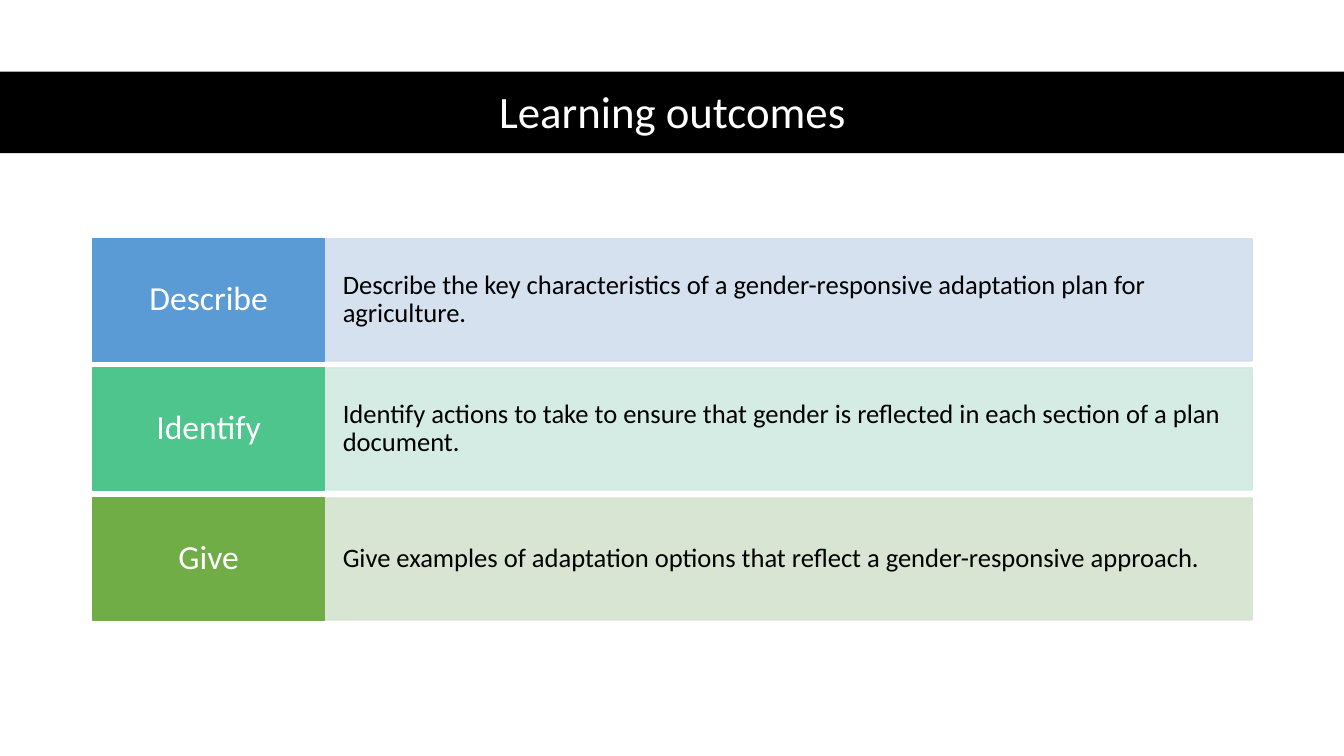
import dataclasses

import lxml.etree
import pptx
import pptx.dml.color
import pptx.enum.shapes
import pptx.enum.text
import pptx.oxml.ns
import pptx.slide
import pptx.util

PX = 9144
FONT = "Calibri"
COLORS = {
    "black": "000000",
    "white": "FFFFFF",
    "blue": "5B9BD5",
    "pale blue": "D2DEEF",
    "teal": "4DC58D",
    "pale teal": "D0EAE1",
    "green": "70AD47",
    "pale green": "D5E3CF",
}
ALIGN = pptx.enum.text.PP_ALIGN


@dataclasses.dataclass(frozen=True)
class Box:
    left: int
    top: int
    width: int
    height: int


@dataclasses.dataclass(frozen=True)
class Style:
    size: int
    color: str
    align: ALIGN
    pad: tuple[int, int]


@dataclasses.dataclass(frozen=True)
class Goal:
    verb: str
    text: str
    color: str


TITLE = Style(32, "white", ALIGN.CENTER, (10, 5))
VERB = Style(24, "white", ALIGN.CENTER, (12, 12))
BODY = Style(19, "black", ALIGN.LEFT, (18, 31))
GOALS = [
    Goal("Describe", "Describe the key characteristics of a gender-responsive "
         "adaptation plan for agriculture.", "blue"),
    Goal("Identify", "Identify actions to take to ensure that gender is reflected "
         "in each section of a plan document.", "teal"),
    Goal("Give", "Give examples of adaptation options that reflect a "
         "gender-responsive approach.", "green"),
]


def px(count: int) -> pptx.util.Emu:
    return pptx.util.Emu(count * PX)


def frame(box: Box) -> list[pptx.util.Emu]:
    return [px(side) for side in dataclasses.astuple(box)]


def rgb(name: str) -> pptx.dml.color.RGBColor:
    return pptx.dml.color.RGBColor.from_string(COLORS[name])


def write(shape, text: str, style: Style) -> None:
    area = shape.text_frame
    area.word_wrap = True
    area.vertical_anchor = pptx.enum.text.MSO_ANCHOR.MIDDLE
    area.margin_left = area.margin_right = px(style.pad[0])
    area.margin_top = area.margin_bottom = px(style.pad[1])
    para = area.paragraphs[0]
    para.alignment = style.align
    para.line_spacing = 0.9
    run = para.add_run()
    run.text = text
    run.font.name = FONT
    run.font.size = pptx.util.Pt(style.size)
    run.font.color.rgb = rgb(style.color)


def block(slide: pptx.slide.Slide, box: Box, color: str, line: bool = True):
    shape = slide.shapes.add_shape(
        pptx.enum.shapes.MSO_SHAPE.RECTANGLE, *frame(box))
    shape.shadow.inherit = False
    shape.fill.solid()
    shape.fill.fore_color.rgb = rgb(color)
    if line:
        shape.line.color.rgb = rgb(color)
        shape.line.width = pptx.util.Pt(1)
    else:
        shape.line.fill.background()
    return shape


def fade(shape, share: int) -> None:
    tag = pptx.oxml.ns.qn("a:alpha")
    for color in shape.element.spPr.iter(pptx.oxml.ns.qn("a:srgbClr")):
        lxml.etree.SubElement(color, tag, val=str(share * 1000))


def row(slide: pptx.slide.Slide, index: int, goal: Goal) -> None:
    top = 237 + 257 * index // 2
    body = block(slide, Box(322, top, 920, 121), f"pale {goal.color}")
    fade(body, 90)
    write(body, goal.text, BODY)
    verb = block(slide, Box(92, top, 230, 121), goal.color)
    write(verb, goal.verb, VERB)


def main() -> None:
    deck = pptx.Presentation()
    deck.slide_width, deck.slide_height = px(1333), px(750)
    slide = deck.slides.add_slide(deck.slide_layouts[6])
    block(slide, Box(0, 71, 1333, 81), "black", line=False)
    title = slide.shapes.add_textbox(*frame(Box(92, 74, 1150, 78)))
    write(title, "Learning outcomes", TITLE)
    for index, goal in enumerate(GOALS):
        row(slide, index, goal)
    deck.save("out.pptx")


if __name__ == "__main__":
    main()
